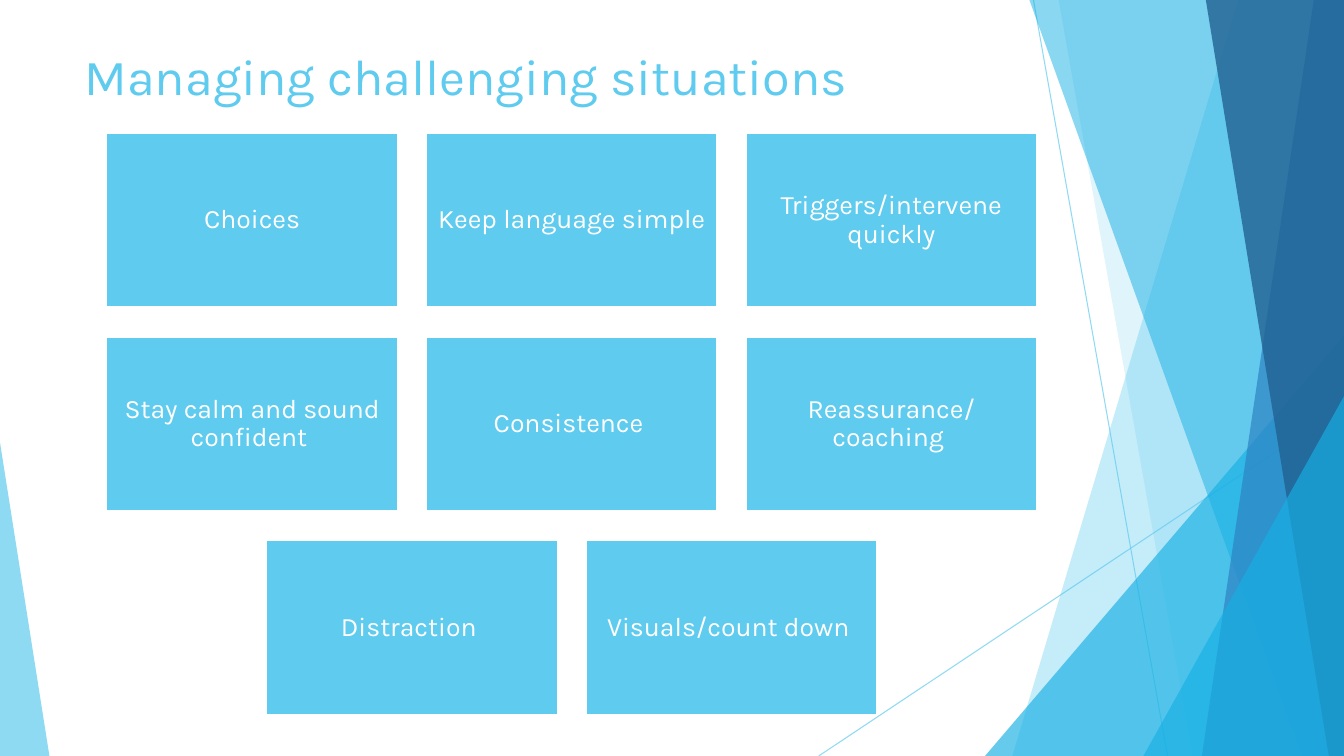
from lxml.etree import SubElement
from pptx import Presentation
from pptx.dml.color import RGBColor
from pptx.enum.shapes import MSO_CONNECTOR as Link, MSO_SHAPE as Shape
from pptx.enum.text import MSO_ANCHOR as Anchor, PP_ALIGN as Align
from pptx.oxml.ns import qn
from pptx.util import Inches, Pt

WIDE, HIGH = 13.33, 7.5
SKY, CYAN, BLUE, NAVY, WHITE = "5FCBEF", "17B0E4", "2E83C3", "226292", "FFFFFF"

# Grid of cards: size of a card, step from one to the next, centre and top
CARD_W, CARD_H = 2.89, 1.73
STEP_X, STEP_Y = 3.17, 2.02
MID, TOP = 5.67, 1.32

CARDS = [
    ["Choices", "Keep language simple", "Triggers/intervene quickly"],
    ["Stay calm and sound confident ", "Consistence ", "Reassurance/coaching "],
    ["Distraction ", "Visuals/count down "],
]

RAYS = [(10.25, 0, 11.58, HIGH), (WIDE, 4.03, 8.12, HIGH)]


def paint(fill, color, alpha=100):
    fill.solid()
    fill.fore_color.rgb = RGBColor.from_string(color)
    if alpha < 100:
        tint = fill._xPr.find(qn("a:solidFill"))[0]
        SubElement(tint, qn("a:alpha"), val=str(alpha * 1000))


def write(shape, text, size, color, align=Align.LEFT, anchor=Anchor.TOP,
          inset=(0.1, 0.05), spacing=1.0):
    frame = shape.text_frame
    frame.word_wrap = True
    frame.vertical_anchor = anchor
    frame.margin_left = frame.margin_right = Inches(inset[0])
    frame.margin_top = frame.margin_bottom = Inches(inset[1])
    para = frame.paragraphs[0]
    para.alignment = align
    para.line_spacing = spacing
    run = para.add_run()
    run.text = text
    run.font.name = "Karla"
    run.font.size = Pt(size)
    run.font.color.rgb = RGBColor.from_string(color)


def add_ray(shapes, ends):
    ray = shapes.add_connector(Link.STRAIGHT, *map(Inches, ends))
    ray.line.width = Pt(0.75)
    paint(ray.line.fill, SKY, 70)
    SubElement(ray._element.spPr, qn("a:effectLst"))


def finish(facet, color, alpha):
    facet.shadow.inherit = False
    facet.line.fill.background()
    paint(facet.fill, color, alpha)


def add_band(shapes, top, foot, color, alpha):
    """Band from a slanted left side, given at top and foot, to the right edge."""
    pen = shapes.build_freeform(Inches(top), 0)
    corners = [(WIDE, 0), (WIDE, HIGH), (foot, HIGH)]
    pen.add_line_segments([(Inches(x), Inches(y)) for x, y in corners])
    finish(pen.convert_to_shape(), color, alpha)


def add_wedge(shapes, left, top, width, apex, color, alpha):
    """Right triangle on the lower edge; apex is 0 at left and 1 at right."""
    place = map(Inches, (left, top, width, HIGH - top))
    wedge = shapes.add_shape(Shape.ISOSCELES_TRIANGLE, *place)
    wedge.adjustments[0] = apex
    finish(wedge, color, alpha)


def add_card(shapes, left, top, text):
    place = map(Inches, (left, top, CARD_W, CARD_H))
    card = shapes.add_shape(Shape.RECTANGLE, *place)
    card.shadow.inherit = False
    paint(card.fill, SKY)
    paint(card.line.fill, WHITE)
    card.line.width = Pt(1.5)
    write(card, text, 19, WHITE, align=Align.CENTER, anchor=Anchor.MIDDLE,
          inset=(0.08, 0.08), spacing=0.9)


FACETS = [
    (add_band, 12.28, 10.04, SKY, 36),
    (add_band, 10.5, 11.83, SKY, 20),
    (add_wedge, 9.77, 3.33, 3.56, 1, CYAN, 66),
    (add_band, 10.21, 12.91, CYAN, 50),
    (add_band, 13.03, 11.92, BLUE, 70),
    (add_band, 11.96, 13.18, NAVY, 80),
    (add_wedge, 11.34, 3.93, 1.99, 1, CYAN, 66),
    (add_wedge, 0, 4.39, 0.49, 0, SKY, 70),
]


def main():
    deck = Presentation()
    deck.slide_width, deck.slide_height = Inches(WIDE), Inches(HIGH)
    shapes = deck.slides.add_slide(deck.slide_layouts[6]).shapes

    for ends in RAYS:
        add_ray(shapes, ends)
    for add, *form in FACETS:
        add(shapes, *form)

    title = shapes.add_textbox(*map(Inches, (0.74, 0.4, 9.4, 1.71)))
    write(title, "Managing challenging situations", 36, SKY)

    for row, texts in enumerate(CARDS):
        start = MID - ((len(texts) - 1) * STEP_X + CARD_W) / 2
        for col, text in enumerate(texts):
            add_card(shapes, start + col * STEP_X, TOP + row * STEP_Y, text)

    deck.save("out.pptx")


if __name__ == "__main__":
    main()
